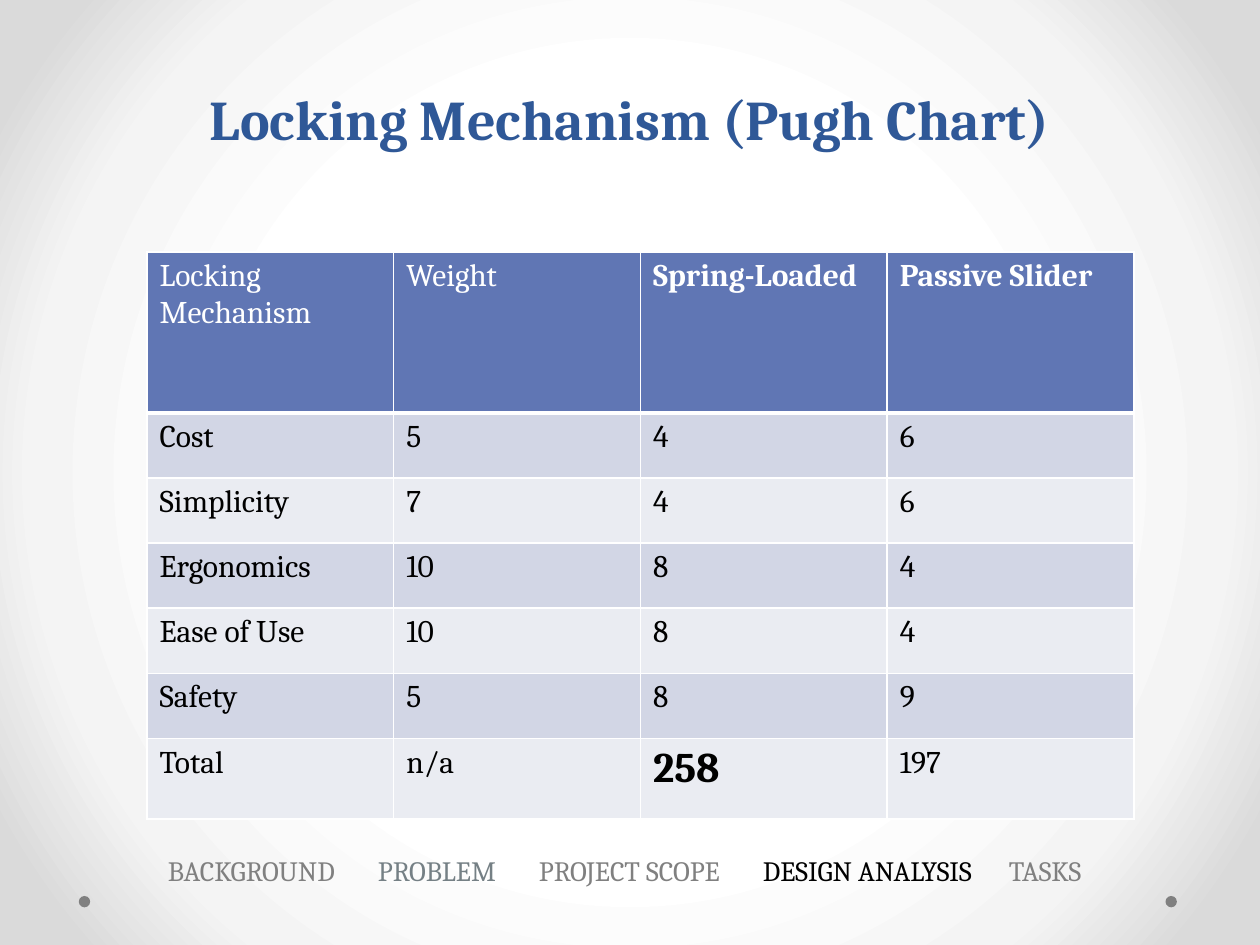
from lxml import etree
from pptx import Presentation
from pptx import util as u
from pptx.dml.color import RGBColor
from pptx.enum import shapes, text
from pptx.oxml import parse_xml
from pptx.oxml.ns import nsdecls, qn

Pt = u.Pt
FONT = "Cambria"
COLORS = {
    "title": "2F5897", "header": "6076B4", "dark_band": "D2D6E5",
    "light_band": "EAECF2", "white": "FFFFFF", "black": "000000",
    "gray": "808080", "slate": "758085", "mist": "F4F4F4", "edge": "DADADA",
}


def style_font(font, size, color, bold=False):
    font.name, font.size, font.bold = FONT, Pt(size), bold
    font.color.rgb = RGBColor.from_string(COLORS[color])


def set_borders(cell, widths):
    """Draw white borders; widths gives points by side (L, R, T, B)."""
    properties = cell._tc.get_or_add_tcPr()
    for index, (side, width) in enumerate(widths.items()):
        properties.insert(index, parse_xml(
            f'<a:ln{side} {nsdecls("a")} w="{Pt(width)}"><a:solidFill>'
            f'<a:srgbClr val="{COLORS["white"]}"/></a:solidFill></a:ln{side}>'))


presentation = Presentation()
presentation.slide_width, presentation.slide_height = Pt(720), Pt(540)
slide = presentation.slides.add_slide(presentation.slide_layouts[6])

# Radial background
stops = "".join(
    f'<a:gs pos="{position * 1000}"><a:srgbClr val="{COLORS[color]}"/></a:gs>'
    for position, color in ((50, "white"), (76, "mist"), (92, "edge")))
slide.element.cSld.insert(0, parse_xml(
    f'<p:bg {nsdecls("p", "a")}><p:bgPr><a:gradFill><a:gsLst>{stops}</a:gsLst>'
    '<a:path path="circle"><a:fillToRect l="50000" t="50000" r="50000" b="50000"/>'
    '</a:path></a:gradFill><a:effectLst/></p:bgPr></p:bg>'))

# Corner dots
for left in (666, 45):
    dot = slide.shapes.add_shape(
        shapes.MSO_SHAPE.OVAL, Pt(left), Pt(512), Pt(6.5), Pt(6.5))
    dot.shadow.inherit = False
    dot.fill.solid()
    dot.fill.fore_color.rgb = RGBColor.from_string(COLORS["gray"])
    dot.line.fill.background()

# Title
title = slide.shapes.add_textbox(Pt(36), Pt(18), Pt(648), Pt(72))
title.text_frame.word_wrap = True
title.text_frame.vertical_anchor = text.MSO_ANCHOR.BOTTOM
paragraph = title.text_frame.paragraphs[0]
paragraph.text = "Locking Mechanism (Pugh Chart)"
paragraph.alignment = text.PP_ALIGN.CENTER
paragraph.line_spacing = Pt(58)
style_font(paragraph.font, 32, "title", True)

# Section names, placed by tab stops
NAV_LEFT = 12
sections = [
    ("BACKGROUND", 96, "gray"), ("PROBLEM", 216, "slate"),
    ("PROJECT SCOPE", 308, "gray"), ("DESIGN ANALYSIS", 436, "black"),
    ("TASKS", 576.5, "gray"),
]
navigation = slide.shapes.add_textbox(Pt(NAV_LEFT), Pt(484), Pt(690), Pt(26.5))
navigation.text_frame.word_wrap = True
navigation.text_frame.margin_left = 0
paragraph = navigation.text_frame.paragraphs[0]
tab_list = etree.SubElement(paragraph._p.get_or_add_pPr(), qn("a:tabLst"))
for name, left, color in sections:
    etree.SubElement(tab_list, qn("a:tab"), pos=str(Pt(left - NAV_LEFT)), algn="l")
    run = paragraph.add_run()
    run.text = "\t" + name
    style_font(run.font, 16, color)

# Pugh chart
rows = [
    ("Locking Mechanism", "Weight", "Spring-Loaded", "Passive Slider"),
    ("Cost", "5", "4", "6"),
    ("Simplicity", "7", "4", "6"),
    ("Ergonomics", "10", "8", "4"),
    ("Ease of Use", "10", "8", "4"),
    ("Safety", "5", "8", "9"),
    ("Total", "n/a", "258", "197"),
]
heights = [92] + [37.2] * 5 + [46]
table = slide.shapes.add_table(
    len(rows), 4, Pt(84), Pt(144), Pt(564), Pt(sum(heights))).table
for column in table.columns:
    column.width = Pt(141)
for row_index, (values, height) in enumerate(zip(rows, heights)):
    table.rows[row_index].height = Pt(height)
    is_header = row_index == 0
    band = "header" if is_header else "dark_band" if row_index % 2 else "light_band"
    for column_index, value in enumerate(values):
        cell = table.cell(row_index, column_index)
        cell.fill.solid()
        cell.fill.fore_color.rgb = RGBColor.from_string(COLORS[band])
        set_borders(cell, {"L": 1, "R": 1, "T": 3 if row_index == 1 else 1,
                           "B": 3 if is_header else 1})
        paragraph = cell.text_frame.paragraphs[0]
        paragraph.text = value
        is_winner = value == "258"
        style_font(paragraph.font, 24 if is_winner else 18,
                   "white" if is_header else "black",
                   is_winner or (is_header and column_index >= 2))

presentation.save("out.pptx")
